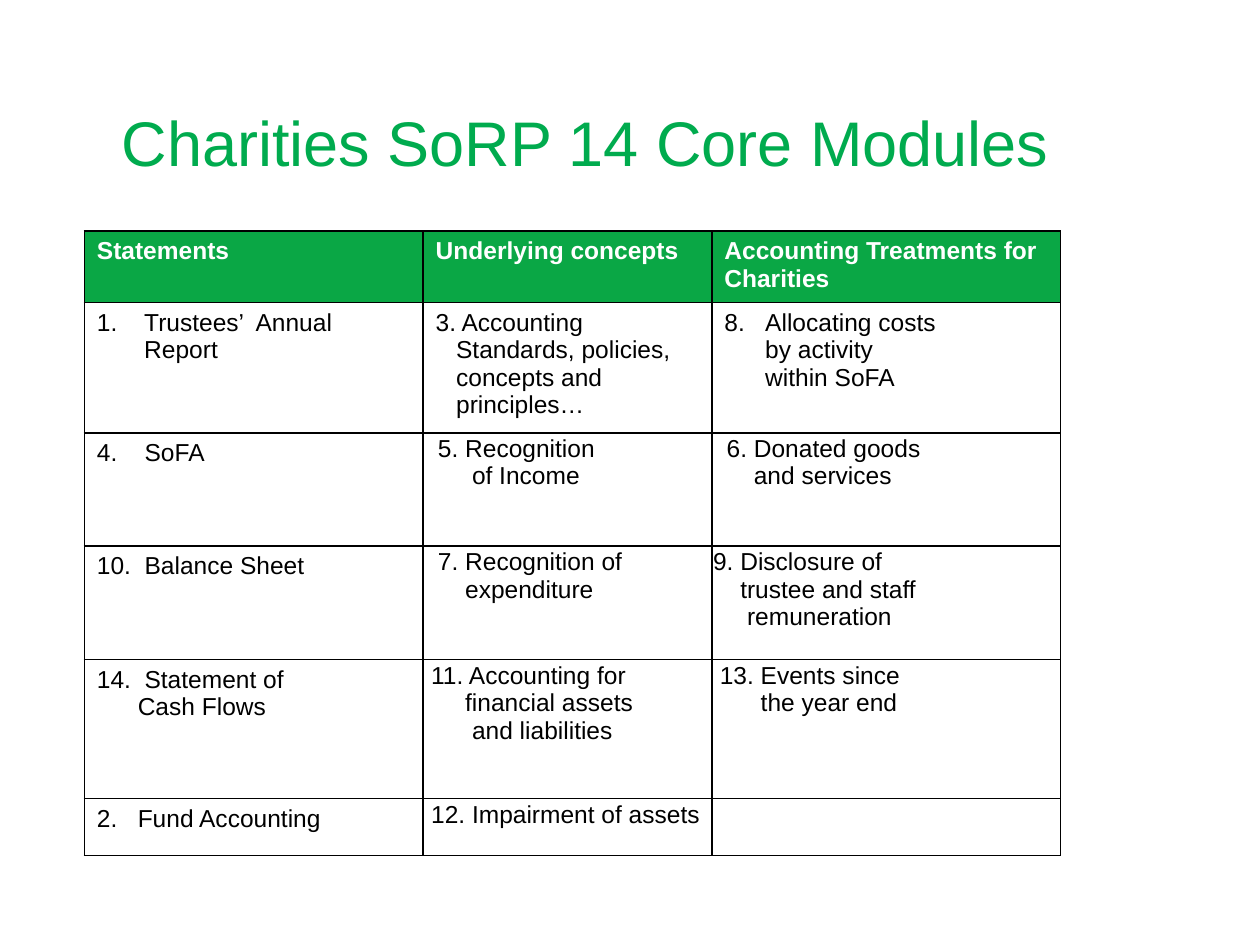
from lxml.etree import SubElement
from pptx import Presentation
from pptx.dml.color import RGBColor
from pptx.enum.text import MSO_ANCHOR
from pptx.oxml.ns import qn
from pptx.util import Pt

TITLE_GREEN = RGBColor(0x00, 0xAB, 0x4E)
HEADER_GREEN = RGBColor(0x0A, 0xA7, 0x45)
WHITE = RGBColor(0xFF, 0xFF, 0xFF)
BLACK = RGBColor(0x00, 0x00, 0x00)

FONT = "Arial"
STEP = 3.89  # indent unit: one space of 14 pt Arial
NUMBERED_INDENT = 27
WIDE_INSETS = (7.2, 3.6, 7.2, 3.6)
TIGHT_INSETS = (0.72, 1.3, 0.72, 0)

COLUMN_WIDTHS = (193.6, 165, 199.4)
ROW_HEIGHTS = (38.9, 70.6, 64.8, 64.8, 79.4, 32.6)
HEADINGS = ("Statements", "Underlying concepts", "Accounting Treatments for Charities")

# Each cell is a list of lines: (indent in steps, text); None asks for automatic numbering.
MODULES = (
    ([(None, "Trustees’  Annual Report")],
     [(0, "3. Accounting"), (3, "Standards, policies,"), (3, "concepts and"), (3, "principles…")],
     [(6, "8.\tAllocating costs"), (6, "by activity"), (6, "within SoFA")]),
    ([(7, "4.\tSoFA")],
     [(2, "5. Recognition"), (7, "of Income")],
     [(2, "6. Donated goods"), (6, "and services")]),
    ([(7, "10.\tBalance Sheet")],
     [(2, "7. Recognition of"), (6, "expenditure")],
     [(0, "9. Disclosure of"), (4, "trustee and staff"), (5, "remuneration")]),
    ([(7, "14.\tStatement of"), (6, "Cash Flows")],
     [(1, "11. Accounting for"), (6, "financial assets"), (7, "and liabilities")],
     [(1, "13. Events since"), (7, "the year end")]),
    ([(6, "2.\tFund Accounting")],
     [(1, "12. Impairment of assets")],
     []),
)


def add_span(para, text, size, color, bold=False):
    span = para.add_run()
    span.text = text
    span.font.name = FONT
    span.font.size = Pt(size)
    span.font.bold = bold
    span.font.color.rgb = color


def indent_line(para, steps, text):
    """Indent a line; a tab or automatic number hangs to the left of its text."""
    numbered = steps is None
    left = Pt(NUMBERED_INDENT if numbered else steps * STEP)
    hanging = numbered or "\t" in text
    properties = para._p.get_or_add_pPr()
    properties.set("marL", str(left))
    properties.set("indent", str(-left if hanging else 0))
    if numbered:
        SubElement(properties, qn("a:buFont"), typeface="+mj-lt")
        SubElement(properties, qn("a:buAutoNum"), type="arabicPeriod")


def style_cell(cell, fill, insets):
    properties = cell._tc.get_or_add_tcPr()
    for side in ("lnL", "lnR", "lnT", "lnB"):
        border = SubElement(properties, qn(f"a:{side}"), w=str(Pt(1)))
        paint = SubElement(border, qn("a:solidFill"))
        SubElement(paint, qn("a:srgbClr"), val=str(BLACK))
    cell.fill.solid()
    cell.fill.fore_color.rgb = fill
    cell.vertical_anchor = MSO_ANCHOR.TOP
    cell.margin_left, cell.margin_top, cell.margin_right, cell.margin_bottom = map(Pt, insets)


def fill_cell(cell, lines, color, bold=False):
    frame = cell.text_frame
    for index, (steps, text) in enumerate(lines):
        para = frame.add_paragraph() if index else frame.paragraphs[0]
        indent_line(para, steps, text)
        add_span(para, text, 14, color, bold)


def add_title(page, left, top, width, height):
    box = page.shapes.add_textbox(Pt(left), Pt(top), Pt(width), Pt(height))
    frame = box.text_frame
    frame.word_wrap = True
    frame.vertical_anchor = MSO_ANCHOR.MIDDLE
    add_span(frame.paragraphs[0], "Charities SoRP 14 Core Modules", 36, TITLE_GREEN)


def add_module_table(page, left, top):
    table = page.shapes.add_table(
        len(ROW_HEIGHTS), len(COLUMN_WIDTHS), Pt(left), Pt(top),
        Pt(sum(COLUMN_WIDTHS)), Pt(sum(ROW_HEIGHTS))).table
    table.horz_banding = False
    for column, width in zip(table.columns, COLUMN_WIDTHS):
        column.width = Pt(width)
    for row, height in zip(table.rows, ROW_HEIGHTS):
        row.height = Pt(height)
    for column, heading in enumerate(HEADINGS):
        cell = table.cell(0, column)
        style_cell(cell, HEADER_GREEN, WIDE_INSETS)
        fill_cell(cell, [(0, heading)], WHITE, bold=True)
    for row, modules in enumerate(MODULES, start=1):
        for column, lines in enumerate(modules):
            cell = table.cell(row, column)
            wide = row == 1 or column == 0
            style_cell(cell, WHITE, WIDE_INSETS if wide else TIGHT_INSETS)
            fill_cell(cell, lines, BLACK)


def main():
    deck = Presentation()
    deck.slide_width, deck.slide_height = Pt(720), Pt(540)
    page = deck.slides.add_slide(deck.slide_layouts[6])
    add_title(page, 62.6, 22.3, 648, 116.6)
    add_module_table(page, 48.2, 132)
    deck.save("out.pptx")


if __name__ == "__main__":
    main()
